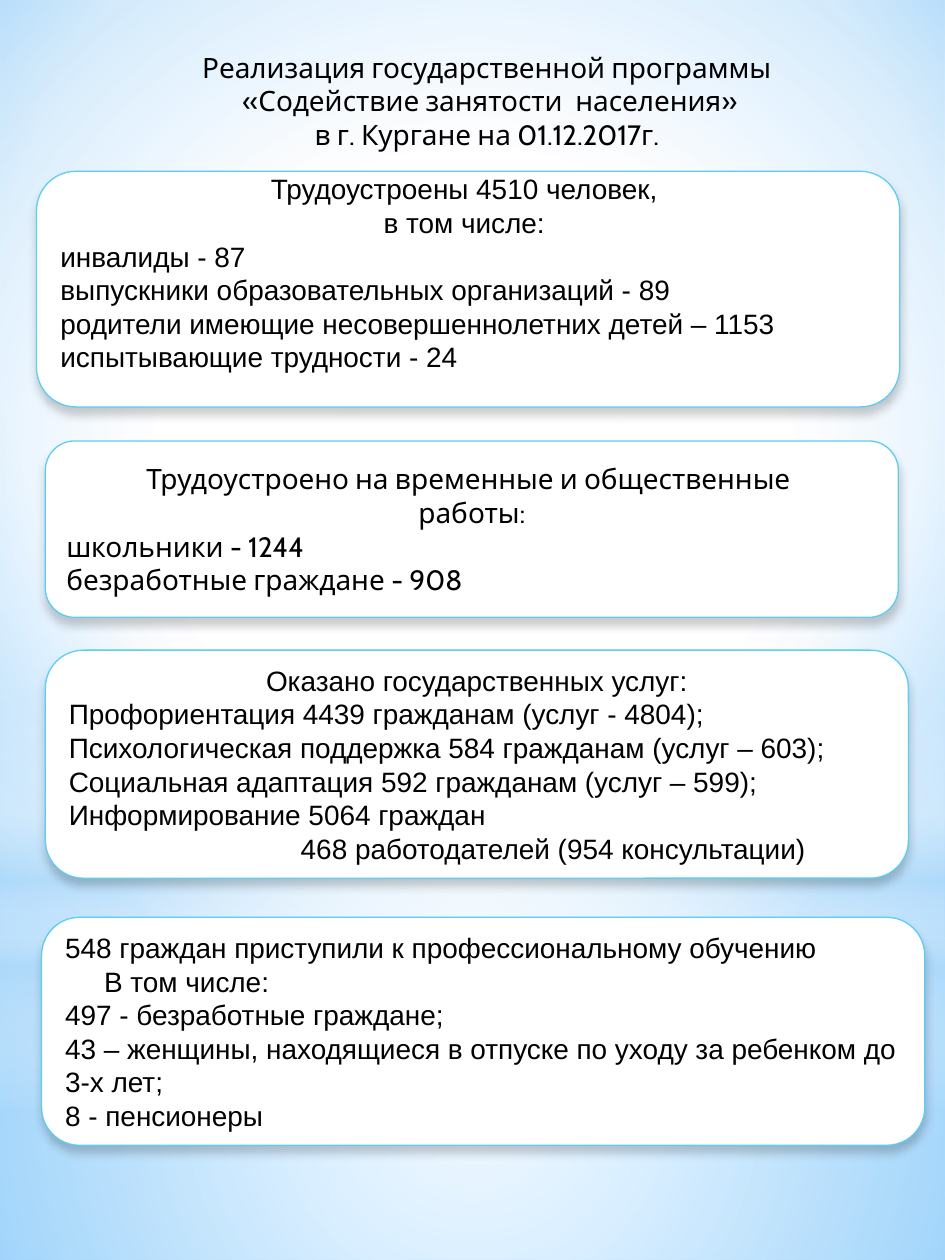
from lxml import etree
from pptx import Presentation, util as u
from pptx.dml.color import RGBColor
from pptx.enum import shapes, text
from pptx.oxml import ns

HUES = {"white": "FFFFFF", "black": "000000", "sky": "5BB9FF",
        "pale": "B4DCFA", "edge": "5ECCF3"}
CENTER = text.PP_ALIGN.CENTER
LEFT = text.PP_ALIGN.LEFT


def rgb(name):
    return RGBColor.from_string(HUES[name])


def add_color(parent, name, alpha=100):
    clr = etree.SubElement(parent, ns.qn("a:srgbClr"), val=HUES[name])
    if alpha < 100:
        etree.SubElement(clr, ns.qn("a:alpha"), val=str(alpha * 1000))


def set_grad(holder, stops, focus=None):
    """Swap an empty fill for a gradient: circular with a focus, else downward."""
    grad = etree.Element(ns.qn("a:gradFill"), rotWithShape="1")
    items = etree.SubElement(grad, ns.qn("a:gsLst"))
    for pos, name, alpha in stops:
        stop = etree.SubElement(items, ns.qn("a:gs"), pos=str(pos * 1000))
        add_color(stop, name, alpha)
    if focus:
        way = etree.SubElement(grad, ns.qn("a:path"), {"path": "circle"})
        sides = {k: str(v * 1000) for k, v in zip("ltrb", focus)}
        etree.SubElement(way, ns.qn("a:fillToRect"), sides)
    else:
        etree.SubElement(grad, ns.qn("a:lin"), ang="5400000", scaled="0")
    blank = holder.find(".//" + ns.qn("a:noFill"))
    blank.getparent().replace(blank, grad)


def add_glow(slide, kind, top, high, stops, focus=None):
    """Full-width soft layer behind the content."""
    glow = slide.shapes.add_shape(kind, 0, u.Inches(top), u.Inches(7.5), u.Inches(high))
    glow.fill.background()
    set_grad(glow.element.spPr, stops, focus)
    glow.line.fill.background()
    glow.shadow.inherit = False


def put_text(frame, lines, font="Arial", size=16, anchor=text.MSO_ANCHOR.MIDDLE):
    """Each line is (wording, alignment, left indent in inches)."""
    frame.word_wrap = True
    frame.vertical_anchor = anchor
    for i, (words, align, indent) in enumerate(lines):
        para = frame.paragraphs[0] if i == 0 else frame.add_paragraph()
        para.alignment = align
        if indent:
            para._p.get_or_add_pPr().set("marL", str(u.Inches(indent)))
        run = para.add_run()
        run.text = words
        run.font.name, run.font.size = font, u.Pt(size)
        run.font.color.rgb = rgb("black")


def add_card(slide, box, lines, font="Arial", bottom=0.05):
    card = slide.shapes.add_shape(shapes.MSO_SHAPE.ROUNDED_RECTANGLE,
                                  *[u.Inches(v) for v in box])
    card.fill.solid()
    card.fill.fore_color.rgb = rgb("white")
    card.line.color.rgb = rgb("edge")
    card.line.width = u.Pt(0.75)
    # Soft shadow below the card
    card.shadow.inherit = False
    effects = card.element.spPr.find(ns.qn("a:effectLst"))
    shade = etree.SubElement(effects, ns.qn("a:outerShdw"), blurRad=str(u.Pt(5)),
                             dist=str(u.Pt(4)), dir="5400000", rotWithShape="0")
    add_color(shade, "black", 20)
    card.text_frame.margin_bottom = u.Inches(bottom)
    put_text(card.text_frame, lines, font)


def add_title(slide, lines):
    title = slide.shapes.title
    slide.shapes.element.append(title.element)  # bring above the backdrop
    title.left, title.top = u.Inches(0.52), u.Inches(0.35)
    title.width, title.height = u.Inches(6.69), u.Inches(0.91)
    put_text(title.text_frame, lines, "Cabin", anchor=text.MSO_ANCHOR.TOP)
    title.text_frame.auto_size = text.MSO_AUTO_SIZE.SHAPE_TO_FIT_TEXT


def add_back(slide):
    rect, oval = shapes.MSO_SHAPE.RECTANGLE, shapes.MSO_SHAPE.OVAL
    mid = (50, 50, 50, 50)
    slide.background.fill.background()
    set_grad(slide.element.find(".//" + ns.qn("p:bgPr")),
             [(0, "white", 100), (60, "white", 100), (100, "sky", 100)], (20, 10, 20, 60))
    add_glow(slide, rect, 7.44, 2.56,
             [(0, "white", 91), (37, "white", 76), (100, "pale", 79)], mid)
    add_glow(slide, rect, 0, 7.44,
             [(0, "white", 89), (48, "white", 62), (100, "pale", 79)], mid)
    add_glow(slide, rect, 5.49, 3.33,
             [(0, "white", 0), (29, "white", 30), (45, "pale", 40),
              (55, "white", 26), (65, "pale", 60), (100, "white", 0)])
    add_glow(slide, oval, 2.33, 7.44, [(0, "white", 100), (56, "white", 0)], mid)


def rows(*words, align=LEFT, indent=0):
    return [(word, align, indent) for word in words]


def main():
    prs = Presentation()
    prs.slide_width, prs.slide_height = u.Inches(7.5), u.Inches(10)
    slide = prs.slides.add_slide(prs.slide_layouts[5])
    add_back(slide)
    add_title(slide, rows("Реализация государственной программы",
                          " «Содействие занятости  населения»",
                          "в г. Кургане на 01.12.2017г.", align=CENTER))

    # People placed in jobs
    add_card(slide, (0.29, 1.36, 6.85, 1.87),
             rows("Трудоустроены 4510 человек, ", "в том числе: ", align=CENTER)
             + rows("инвалиды - 87",
                    "выпускники образовательных организаций - 89",
                    "родители имеющие несовершеннолетних детей – 1153",
                    "испытывающие трудности - 24"), bottom=0.31)

    # Temporary and public work
    add_card(slide, (0.36, 3.5, 6.77, 1.4),
             rows("Трудоустроено на временные и общественные ", "работы:", align=CENTER)
             + rows("школьники - 1244", "безработные граждане - 908"), font="Cabin")

    # Services provided
    add_card(slide, (0.36, 5.16, 6.85, 1.81),
             rows("Оказано государственных услуг:", align=CENTER)
             + rows("Профориентация 4439 гражданам (услуг - 4804);",
                    "Психологическая поддержка 584 гражданам (услуг – 603);",
                    "Социальная адаптация 592 гражданам (услуг – 599);",
                    "Информирование 5064 граждан")
             + rows("468 работодателей (954 консультации)", indent=1.84))

    # Vocational training
    add_card(slide, (0.33, 7.28, 7.01, 1.81),
             rows("548 граждан приступили к профессиональному обучению")
             + rows("В том числе:", indent=0.31)
             + rows("497 - безработные граждане;",
                    "43 – женщины, находящиеся в отпуске по уходу за ребенком до 3-х лет;",
                    "8 - пенсионеры"))
    prs.save("out.pptx")


if __name__ == "__main__":
    main()
